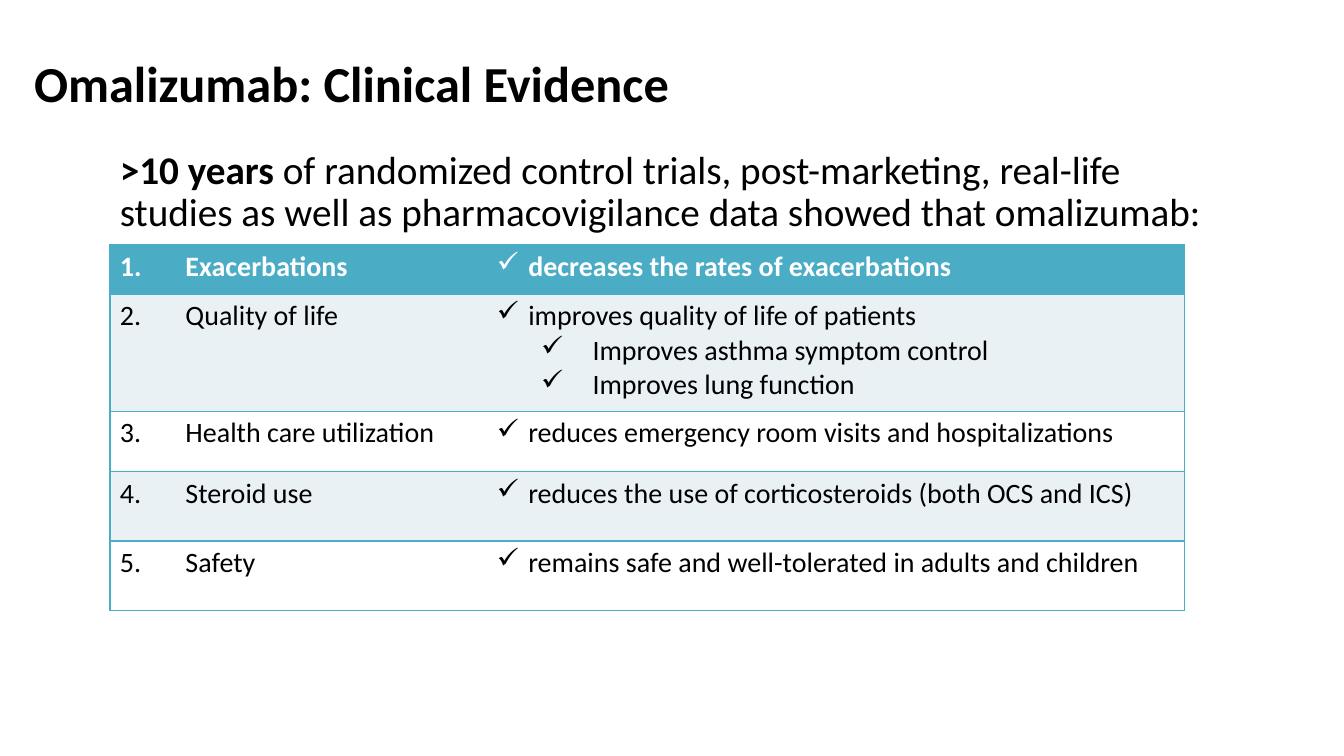
import pptx
import pptx.util
import pptx.dml.color
import pptx.enum.text
import pptx.oxml
import pptx.oxml.ns
from lxml import etree

Cm, Pt = pptx.util.Cm, pptx.util.Pt

TITLE = "Omalizumab: Clinical Evidence"
LEAD = [
    (">10 years ", True),
    ("of randomized control trials, post-marketing, real-life studies "
     "as well as pharmacovigilance data showed that omalizumab:", False),
]
# topic, finding, further points, row height in cm
ROWS = [
    ("Exacerbations", "decreases the rates of exacerbations", [], 1.24),
    ("Quality of life", "improves quality of life of patients",
     ["Improves asthma symptom control", "Improves lung function"], 2.95),
    ("Health care utilization",
     "reduces emergency room visits and hospitalizations", [], 1.52),
    ("Steroid use",
     "reduces the use of corticosteroids (both OCS and ICS)", [], 1.75),
    ("Safety",
     "remains safe and well-tolerated in adults and children", [], 1.75),
]
COLS = [1.65, 7.85, 17.58]
LEFT, TOP = 2.77, 6.17
INDENT = [(0.79, -0.79), (2.41, -1.3)]  # margin and first line, by level
THEME = {
    "font": "Calibri", "title": 36, "lead": 28, "cell": 20,
    "ink": "000000", "head": "4BACC6", "white": "FFFFFF", "band": "E9F1F5",
}


def color(name):
    return pptx.dml.color.RGBColor.from_string(THEME[name])


def style(para, size, ink="ink", bold=None):
    font = para.font
    font.name, font.size, font.bold = THEME["font"], Pt(THEME[size]), bold
    font.color.rgb = color(ink)


def add_text(slide, box, runs, size, anchor):
    """Add a text box of one paragraph made of (text, bold) runs."""
    frame = slide.shapes.add_textbox(*map(Cm, box)).text_frame
    frame.word_wrap = True
    frame.vertical_anchor = anchor
    para = frame.paragraphs[0]
    para.line_spacing = 0.9
    for text, bold in runs:
        run = para.add_run()
        run.text, run.font.bold = text, bold
    style(para, size)


def add_check(para, level):
    props = para._p.get_or_add_pPr()
    margin, first = INDENT[level]
    props.set("marL", str(Cm(margin)))
    props.set("indent", str(Cm(first)))
    para.level = level
    mark = etree.SubElement(props, pptx.oxml.ns.qn("a:buChar"))
    mark.set("char", "✓")


def add_edges(cell, sides):
    """Draw the named sides of a cell and clear the others."""
    props = cell._tc.get_or_add_tcPr()
    for place, side in enumerate("LRTB"):
        if side in sides:
            paint = f'<a:solidFill><a:srgbClr val="{THEME["head"]}"/></a:solidFill>'
        else:
            paint = "<a:noFill/>"
        line = pptx.oxml.parse_xml(
            f'<a:ln{side} {pptx.oxml.ns.nsdecls("a")} w="{Pt(1)}">{paint}</a:ln{side}>')
        props.insert(place, line)


def fill_cell(cell, lines, row, col):
    head = row == 0
    cell.fill.solid()
    cell.fill.fore_color.rgb = color(
        "head" if head else "band" if row % 2 else "white")
    add_edges(cell, "TB" + {0: "L", len(COLS) - 1: "R"}.get(col, ""))
    frame = cell.text_frame
    for level, text in lines:
        para = frame.add_paragraph() if level else frame.paragraphs[0]
        para.text = text
        if col == len(COLS) - 1:
            add_check(para, level)
        style(para, "cell", "white" if head else "ink", head)


def add_grid(slide):
    heights = [row[-1] for row in ROWS]
    box = (LEFT, TOP, sum(COLS), sum(heights))
    grid = slide.shapes.add_table(len(ROWS), len(COLS), *map(Cm, box)).table
    for col, width in zip(grid.columns, COLS):
        col.width = Cm(width)
    for r, (topic, main, more, height) in enumerate(ROWS):
        grid.rows[r].height = Cm(height)
        points = [(0, main)] + [(1, text) for text in more]
        cells = [[(0, f"{r + 1}.")], [(0, topic)], points]
        for c, lines in enumerate(cells):
            fill_cell(grid.cell(r, c), lines, r, c)


def main():
    deck = pptx.Presentation()
    deck.slide_width, deck.slide_height = Cm(33.87), Cm(19.05)
    slide = deck.slides.add_slide(deck.slide_layouts[6])
    anchor = pptx.enum.text.MSO_ANCHOR
    add_text(slide, (LEFT, 3.66, 28.35, 13), LEAD, "lead", anchor.TOP)
    add_text(slide, (0.61, 1.09, 32.87, 2.16), [(TITLE, True)],
             "title", anchor.MIDDLE)
    add_grid(slide)
    deck.save("out.pptx")


if __name__ == "__main__":
    main()
